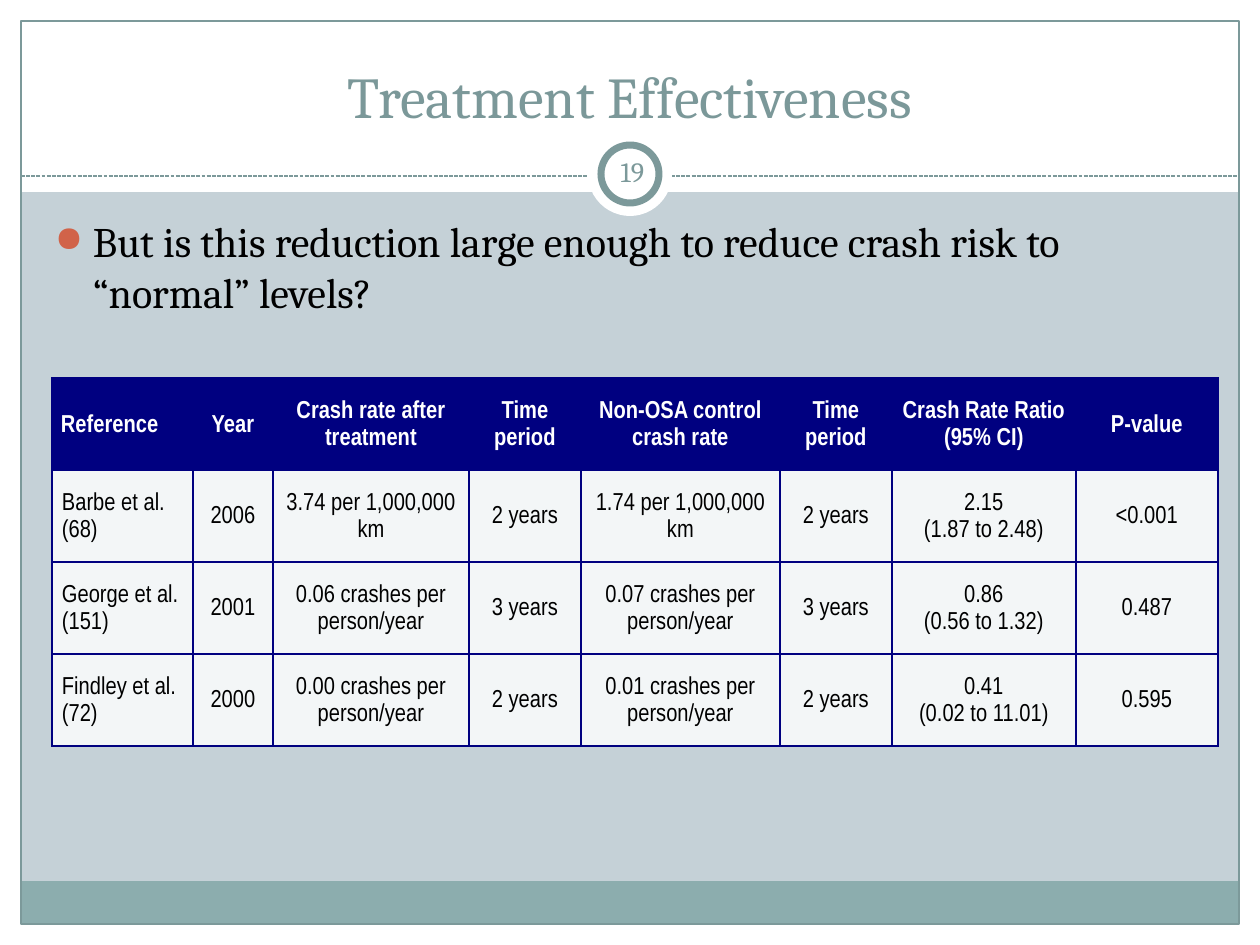
from lxml import etree
from pptx import Presentation
from pptx.dml.color import RGBColor
from pptx.enum.dml import MSO_LINE
from pptx.enum.shapes import MSO_CONNECTOR, MSO_SHAPE
from pptx.enum.text import MSO_ANCHOR, PP_ALIGN
from pptx.oxml import parse_xml
from pptx.oxml.ns import nsdecls, qn
from pptx.util import Pt

RECT, OVAL = MSO_SHAPE.RECTANGLE, MSO_SHAPE.OVAL
LINE, DASH = MSO_CONNECTOR.STRAIGHT, MSO_LINE.SQUARE_DOT
LEFT, CENTER = PP_ALIGN.LEFT, PP_ALIGN.CENTER
TOP, MIDDLE, BOTTOM = MSO_ANCHOR.TOP, MSO_ANCHOR.MIDDLE, MSO_ANCHOR.BOTTOM

SCALE = 914400 / 126
WIDE, HIGH, EDGE = 1260, 945, 21
SERIF, NARROW = "Cambria", "Arial Narrow"
HEX = {
    "back": "C5D1D7", "white": "FFFFFF", "band": "8CADAE", "rule": "7C999A",
    "title": "7B9899", "black": "000000", "dot": "D16349", "navy": "000080",
    "cell": "F3F6F7",
}
COLS = [141, 80, 196, 112, 199, 112, 184, 142]
ROW = 92
HEAD = ["Reference", "Year", "Crash rate after treatment", "Time period",
        "Non-OSA control crash rate", "Time period",
        "Crash Rate Ratio (95% CI)", "P-value"]
DATA = [
    ["Barbe et al.(68)", "2006", "3.74 per 1,000,000 km", "2 years",
     "1.74 per 1,000,000 km", "2 years", "2.15\n(1.87 to 2.48)", "<0.001"],
    ["George et al.(151)", "2001", "0.06 crashes per person/year", "3 years",
     "0.07 crashes per person/year", "3 years", "0.86\n(0.56 to 1.32)", "0.487"],
    ["Findley et al.(72)", "2000", "0.00 crashes per person/year", "2 years",
     "0.01 crashes per person/year", "2 years", "0.41\n(0.02 to 11.01)", "0.595"],
]


def px(n):
    """Turn px into EMU."""
    return round(n * SCALE)


def tint(name):
    """Look up a colour by name."""
    return RGBColor.from_string(HEX[name])


def shape(slide, kind, box, fill=None, width=None):
    """Add a plain shape with an optional fill and rule."""
    part = slide.shapes.add_shape(kind, *map(px, box))
    part.shadow.inherit = False
    if fill:
        part.fill.solid()
        part.fill.fore_color.rgb = tint(fill)
    else:
        part.fill.background()
    if width:
        part.line.color.rgb = tint("rule")
        part.line.width = Pt(width)
    else:
        part.line.fill.background()


def write(para, text, size, font, color, bold=False):
    """Add text run by run, with a line break at each newline."""
    for i, piece in enumerate(text.split("\n")):
        if i:
            para.add_line_break()
        run = para.add_run()
        run.text = piece
        run.font.size = Pt(size)
        run.font.name = font
        run.font.bold = bold
        run.font.color.rgb = tint(color)


def label(slide, box, text, size, color, align, anchor, inset=(13, 6)):
    """Add a text box and return its paragraph."""
    frame = slide.shapes.add_textbox(*map(px, box)).text_frame
    frame.word_wrap = True
    frame.vertical_anchor = anchor
    frame.margin_left = frame.margin_right = px(inset[0])
    frame.margin_top = frame.margin_bottom = px(inset[1])
    para = frame.paragraphs[0]
    para.alignment = align
    write(para, text, size, SERIF, color)
    return para


def bullet(para, indent):
    """Give a paragraph a hanging round bullet."""
    props = para._p.get_or_add_pPr()
    props.set("marL", str(px(indent)))
    props.set("indent", str(-px(indent)))
    for item in (
        '<a:spcBef {}><a:spcPct val="20000"/></a:spcBef>',
        '<a:buClr {}><a:srgbClr val="' + HEX["dot"] + '"/></a:buClr>',
        '<a:buSzPct {} val="85000"/>',
        '<a:buChar {} char="●"/>',
    ):
        props.append(parse_xml(item.format(nsdecls("a"))))


def border(cell):
    """Draw a navy rule on all four sides of a cell."""
    props = cell._tc.get_or_add_tcPr()
    for i, side in enumerate(("lnL", "lnR", "lnT", "lnB")):
        rule = etree.Element(qn("a:" + side), w=str(Pt(1)))
        fill = etree.SubElement(rule, qn("a:solidFill"))
        etree.SubElement(fill, qn("a:srgbClr"), val=HEX["navy"])
        props.insert(i, rule)


def frame(slide, box):
    """Draw the white margins, bottom band, outline and dashed rule."""
    x, y, w, h = box
    for strip in (
        (x, y + h - EDGE, w, EDGE),
        (x, y, w, 192),
        (x, y, EDGE, h),
        (x + w - EDGE, y, EDGE, h),
    ):
        shape(slide, RECT, strip, "white")
    shape(slide, RECT, (x + EDGE, y + h - EDGE - 43, w - 2 * EDGE, 43), "band")
    shape(slide, RECT, (x + EDGE, y + EDGE, w - 2 * EDGE, h - 2 * EDGE), width=0.75)
    ends = (x + EDGE, y + 176, x + w - EDGE, y + 176)
    rule = slide.shapes.add_connector(LINE, *map(px, ends))
    rule.line.color.rgb = tint("rule")
    rule.line.width = Pt(0.75)
    rule.line.dash_style = DASH
    etree.SubElement(rule._element.spPr, qn("a:effectLst"))


def badge(slide, box):
    """Draw the ringed page number."""
    x, y, w, h = box
    shape(slide, OVAL, box, "white")
    shape(slide, OVAL, (x + 13, y + 13, w - 26, h - 26), "white", 4)
    label(slide, (x + 13, y + 9, 63, 60), "19", 16, "rule", CENTER, MIDDLE, (6, 6))


def words(slide, box):
    """Place the title and the bullet below it."""
    x, y, w, h = box
    label(slide, (x, y, w, 104), "Treatment Effectiveness", 33, "title", CENTER, BOTTOM)
    ask = "But is this reduction large enough to reduce crash risk to “normal” levels?"
    para = label(slide, (x, y + 178, w - 4, h - 178), ask, 24, "black", LEFT, TOP)
    bullet(para, 38)


def fill_cell(cell, text, top, first):
    """Style one table cell and write its text."""
    cell.fill.solid()
    cell.fill.fore_color.rgb = tint("navy" if top else "cell")
    cell.vertical_anchor = MIDDLE
    cell.margin_left = cell.margin_right = px(9)
    cell.margin_top = cell.margin_bottom = 0
    border(cell)
    para = cell.text_frame.paragraphs[0]
    para.alignment = LEFT if first else CENTER
    para.line_spacing = 1.15
    para.space_before = para.space_after = Pt(2)
    if first and not top:
        para._p.get_or_add_pPr().set("marL", str(px(1)))
    write(para, text, 14, NARROW, "white" if top else "black", top)


def grid(slide, box):
    """Build the table of crash rates."""
    rows = [HEAD] + DATA
    table = slide.shapes.add_table(len(rows), len(COLS), *map(px, box)).table
    for col, width in zip(table.columns, COLS):
        col.width = px(width)
    for r, row in enumerate(rows):
        table.rows[r].height = px(ROW)
        for c, text in enumerate(row):
            fill_cell(table.cell(r, c), text, r == 0, c == 0)


def main():
    """Build and save the slide."""
    deck = Presentation()
    deck.slide_width, deck.slide_height = px(WIDE), px(HIGH)
    slide = deck.slides.add_slide(deck.slide_layouts[6])
    slide.background.fill.solid()
    slide.background.fill.fore_color.rgb = tint("back")
    frame(slide, (0, 0, WIDE, HIGH))
    badge(slide, (588, 132, 84, 84))
    words(slide, (42, 32, 1176, 808))
    grid(slide, (52, 378, sum(COLS), ROW * (len(DATA) + 1)))
    deck.save("out.pptx")


if __name__ == "__main__":
    main()
